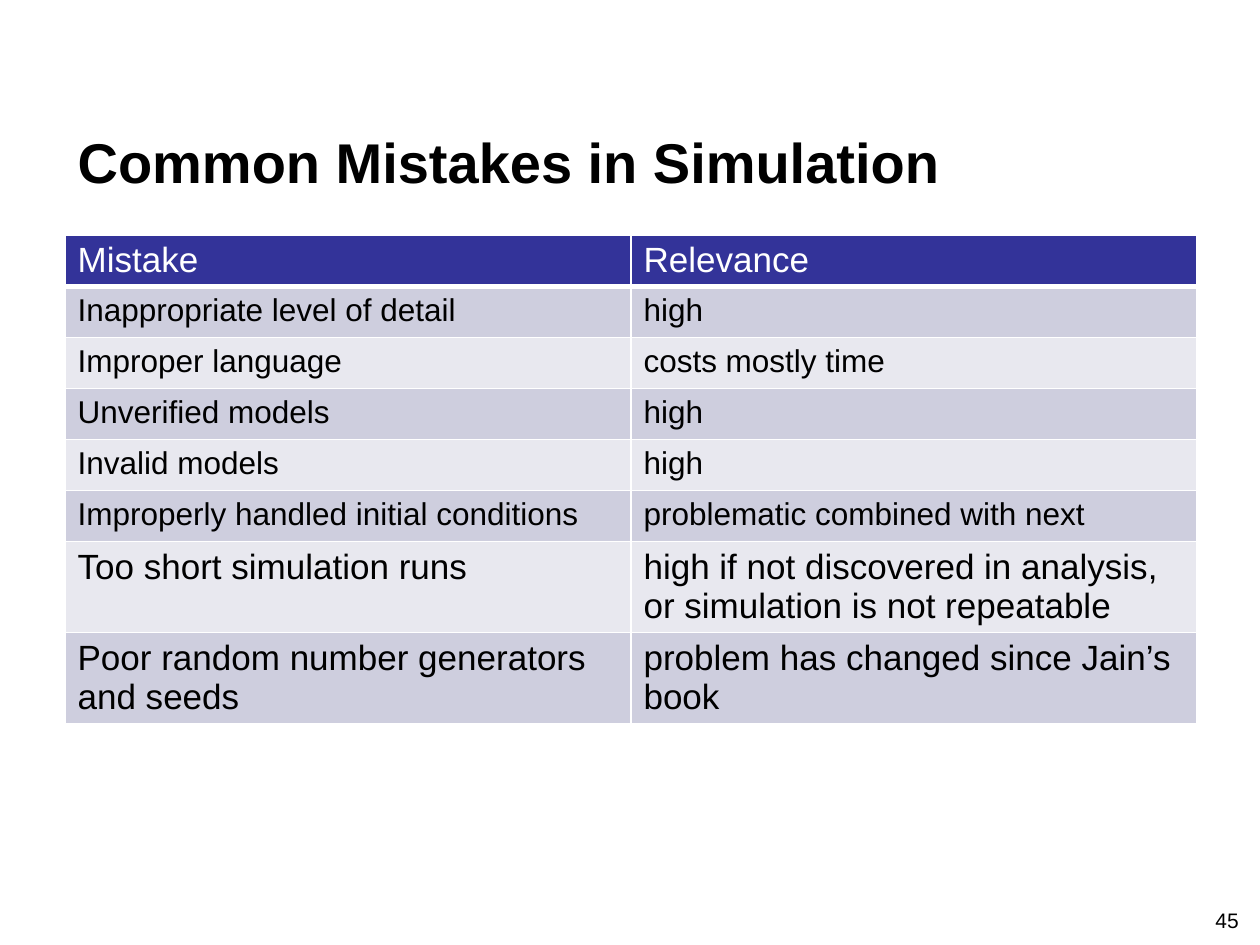
from typing import NamedTuple

from lxml import etree
from pptx import Presentation
from pptx.dml.color import RGBColor
from pptx.enum.text import MSO_ANCHOR, PP_ALIGN
from pptx.oxml.ns import qn
from pptx.util import Pt

LEFT = PP_ALIGN.LEFT
MIDDLE = MSO_ANCHOR.MIDDLE
EMU_PER_PX = 914400 / 126
FONT = "Arial"
TITLE_ONLY = 5
COLORS = {
    "text": "000000",
    "header_text": "FFFFFF",
    "header": "333399",
    "odd": "CECEDE",
    "even": "E8E8EF",
    "border": "FFFFFF",
}


class Row(NamedTuple):
    mistake: str
    relevance: str
    size: int = 18
    height: int = 51


ROWS = [
    Row("Mistake", "Relevance", 20),
    Row("Inappropriate level of detail", "high"),
    Row("Improper language", "costs mostly time"),
    Row("Unverified models", "high"),
    Row("Invalid models", "high"),
    Row("Improperly handled initial conditions", "problematic combined with next"),
    Row("Too short simulation runs",
        "high if not discovered in analysis, or simulation is not repeatable", 20, 91),
    Row("Poor random number generators and seeds",
        "problem has changed since Jain’s book", 20, 91),
]


def px(length: int) -> int:
    return round(length * EMU_PER_PX)


def write(frame, text: str, size: int, color: str, bold: bool = False) -> None:
    paragraph = frame.paragraphs[0]
    paragraph.alignment = LEFT
    run = paragraph.add_run()
    run.text = text
    run.font.name = FONT
    run.font.size = Pt(size)
    run.font.bold = bold
    run.font.color.rgb = RGBColor.from_string(COLORS[color])


def add_borders(cell, bottom: int, top: int) -> None:
    properties = cell._tc.get_or_add_tcPr()
    for side, width in (("lnL", 1), ("lnR", 1), ("lnT", top), ("lnB", bottom)):
        line = etree.SubElement(properties, qn(f"a:{side}"), w=str(Pt(width)))
        fill = etree.SubElement(line, qn("a:solidFill"))
        etree.SubElement(fill, qn("a:srgbClr"), val=COLORS["border"])


def add_mistakes(slide, left: int, top: int, column_width: int) -> None:
    height = sum(row.height for row in ROWS)
    mistakes = slide.shapes.add_table(
        len(ROWS), 2, px(left), px(top), px(2 * column_width), px(height)
    ).table
    for column in mistakes.columns:
        column.width = px(column_width)
    for index, row in enumerate(ROWS):
        mistakes.rows[index].height = px(row.height)
        is_header = index == 0
        band = "header" if is_header else ("even", "odd")[index % 2]
        color = "header_text" if is_header else "text"
        for column, text in enumerate((row.mistake, row.relevance)):
            cell = mistakes.cell(index, column)
            add_borders(cell, 3 if is_header else 1, 3 if index == 1 else 1)
            cell.fill.solid()
            cell.fill.fore_color.rgb = RGBColor.from_string(COLORS[band])
            write(cell.text_frame, text, row.size, color)


def add_title(slide, text: str) -> None:
    title = slide.shapes.title
    title.left, title.top, title.width, title.height = map(px, (65, 116, 1132, 90))
    title.text_frame.vertical_anchor = MIDDLE
    write(title.text_frame, text, 32, "text", bold=True)


def add_page_number(slide, number: str) -> None:
    page = slide.shapes.add_textbox(*map(px, (1203, 901, 52, 38)))
    page.text_frame.word_wrap = False
    write(page.text_frame, number, 12, "text")


def main() -> None:
    deck = Presentation()
    deck.slide_width, deck.slide_height = px(1260), px(945)
    slide = deck.slides.add_slide(deck.slide_layouts[TITLE_ONLY])
    add_title(slide, "Common Mistakes in Simulation")
    add_mistakes(slide, 65, 235, 566)
    add_page_number(slide, "45")
    deck.save("out.pptx")


if __name__ == "__main__":
    main()
